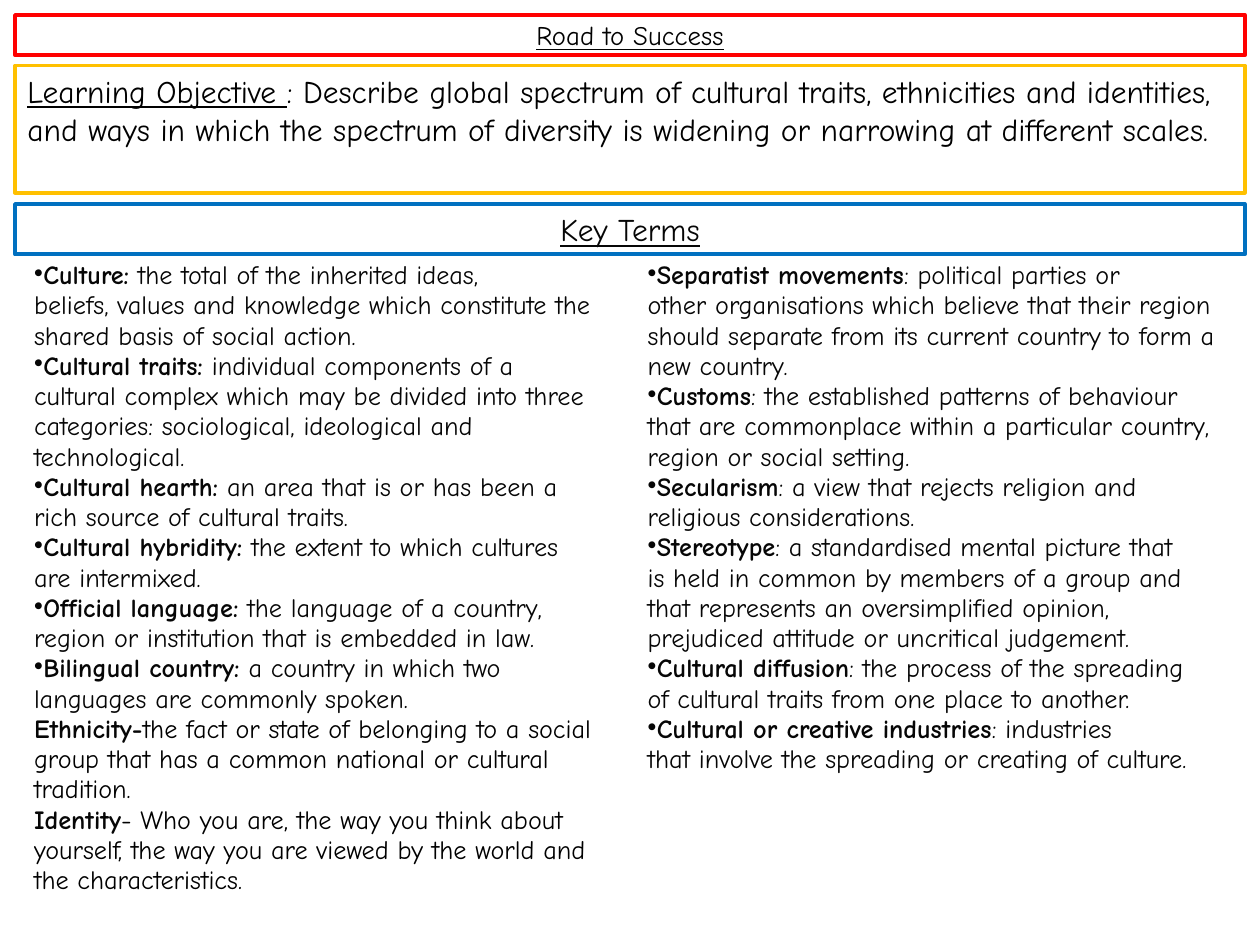
from dataclasses import dataclass

import pptx
import pptx.dml.color
import pptx.enum.shapes
import pptx.enum.text
import pptx.oxml
import pptx.oxml.ns
import pptx.util

Inches = pptx.util.Inches
RGB = pptx.dml.color.RGBColor.from_string
ALIGN = pptx.enum.text.PP_ALIGN
ANCHOR = pptx.enum.text.MSO_ANCHOR


@dataclass(frozen=True)
class Theme:
    font: str = "Comic Neue"
    black: str = "000000"
    ink: str = "060606"
    white: str = "FFFFFF"
    red: str = "FF0000"
    amber: str = "FFC000"
    blue: str = "0070C0"
    title_size: float = 15.3
    banner_size: float = 18
    term_size: float = 15
    border: float = 2.25


@dataclass(frozen=True)
class Banner:
    top: float
    height: float
    border: str


@dataclass(frozen=True)
class Term:
    name: str
    meaning: str
    bulleted: bool = True
    color: str = Theme.ink


THEME = Theme()
SLIDE_W, SLIDE_H = 10, 7.5
MARGIN = 0.12
BANNER_W = SLIDE_W - 2 * MARGIN

TITLE = Banner(0.12, 0.32, THEME.red)
OBJECTIVE = Banner(0.52, 1.01, THEME.amber)
KEY_TERMS = Banner(1.62, 0.4, THEME.blue)

# "~" marks a no-break space
COLUMNS = [
    [
        Term("Culture:", "~the total of the inherited ideas, beliefs,~values and knowledge "
             "which constitute the shared~basis of social action."),
        Term("Cultural traits:", "~individual components of a cultural~complex which may be "
             "divided into three categories:~sociological, ideological and technological."),
        Term("Cultural hearth:", "~an area that is or has been a rich~source of cultural traits."),
        Term("Cultural hybridity:", "~the extent to which cultures are~intermixed."),
        Term("Official language:", "~the language of a country, region~or institution that is "
             "embedded in law."),
        Term("Bilingual country:", "~a country in which two languages~are commonly spoken."),
        Term("Ethnicity-", "the fact or state of belonging to a social group that has a common "
             "national or cultural tradition.", False, THEME.black),
        Term("Identity", "- Who you are, the way you think about yourself, the way you are "
             "viewed by the world and the characteristics.", False, THEME.black),
    ],
    [
        Term("Separatist movements", ": political parties or other~organisations which believe "
             "that their region should~separate from its current country to form a new~country."),
        Term("Customs", ": the established patterns of behaviour that~are commonplace within a "
             "particular country, region~or social setting."),
        Term("Secularism", ": a view that rejects religion and religious~considerations."),
        Term("Stereotype", ": a standardised mental picture that is~held in common by members "
             "of a group and that~represents an oversimplified opinion, prejudiced~attitude or "
             "uncritical judgement."),
        Term("Cultural diffusion", ": the process of the spreading of~cultural traits from one "
             "place to another."),
        Term("Cultural or creative industries", ": industries that~involve the spreading or "
             "creating of culture."),
    ],
]


def add_run(p, text: str, size: float, color: str, bold: bool = False,
            underline: bool = False) -> None:
    r = p.add_run()
    r.text = text.replace("~", chr(160))
    r.font.name, r.font.size = THEME.font, pptx.util.Pt(size)
    r.font.bold, r.font.underline = bold, underline
    r.font.color.rgb = RGB(color)


def frame(sp, banner: Banner, align, anchor):
    """Place a bordered banner and return its first paragraph."""
    sp.left, sp.top = Inches(MARGIN), Inches(banner.top)
    sp.width, sp.height = Inches(BANNER_W), Inches(banner.height)
    sp.line.color.rgb = RGB(banner.border)
    sp.line.width = pptx.util.Pt(THEME.border)
    tf = sp.text_frame
    tf.word_wrap = True
    tf.auto_size = pptx.enum.text.MSO_AUTO_SIZE.NONE
    tf.vertical_anchor = anchor
    tf.paragraphs[0].alignment = align
    return tf.paragraphs[0]


def add_box(slide):
    sp = slide.shapes.add_shape(pptx.enum.shapes.MSO_SHAPE.RECTANGLE, 0, 0, 0, 0)
    sp.shadow.inherit = False
    sp.fill.background()
    return sp


def add_bullet(p) -> None:
    bullet = pptx.oxml.parse_xml(
        f'<a:buChar {pptx.oxml.ns.nsdecls("a")} char="•"/>')
    p._p.get_or_add_pPr().append(bullet)


def fill_cell(cell, terms: list[Term]) -> None:
    cell.fill.background()
    cell.margin_left = cell.margin_right = Inches(0.13)
    cell.margin_top = cell.margin_bottom = Inches(0.04)
    tf = cell.text_frame
    for i, term in enumerate(terms):
        p = tf.add_paragraph() if i else tf.paragraphs[0]
        if term.bulleted:
            add_bullet(p)
        add_run(p, term.name, THEME.term_size, THEME.ink, bold=True)
        add_run(p, term.meaning, THEME.term_size, term.color)


def main() -> None:
    prs = pptx.Presentation()
    prs.slide_width, prs.slide_height = Inches(SLIDE_W), Inches(SLIDE_H)
    slide = prs.slides.add_slide(prs.slide_layouts[5])

    # Definitions in two equal columns
    table = slide.shapes.add_table(1, len(COLUMNS), Inches(0.14), Inches(2.03),
                                   Inches(9.74), Inches(4.95)).table
    table.first_row = table.horz_banding = False
    for cell, terms in zip(table.rows[0].cells, COLUMNS):
        fill_cell(cell, terms)

    # Key terms heading
    sp = add_box(slide)
    p = frame(sp, KEY_TERMS, ALIGN.CENTER, ANCHOR.MIDDLE)
    sp.fill.solid()
    sp.fill.fore_color.rgb = RGB(THEME.white)
    add_run(p, "Key Terms", THEME.banner_size, THEME.ink, underline=True)

    # Learning objective
    p = frame(add_box(slide), OBJECTIVE, ALIGN.LEFT, ANCHOR.TOP)
    add_run(p, "Learning Objective ", THEME.banner_size, THEME.black, underline=True)
    add_run(p, ": Describe global spectrum of cultural traits, ethnicities and identities, "
            "and ways in which the spectrum of diversity is widening or narrowing at "
            "different scales.", THEME.banner_size, THEME.black)

    # Title
    p = frame(slide.shapes.title, TITLE, ALIGN.CENTER, ANCHOR.MIDDLE)
    add_run(p, "Road to Success", THEME.title_size, THEME.black, underline=True)

    prs.save("out.pptx")


if __name__ == "__main__":
    main()
